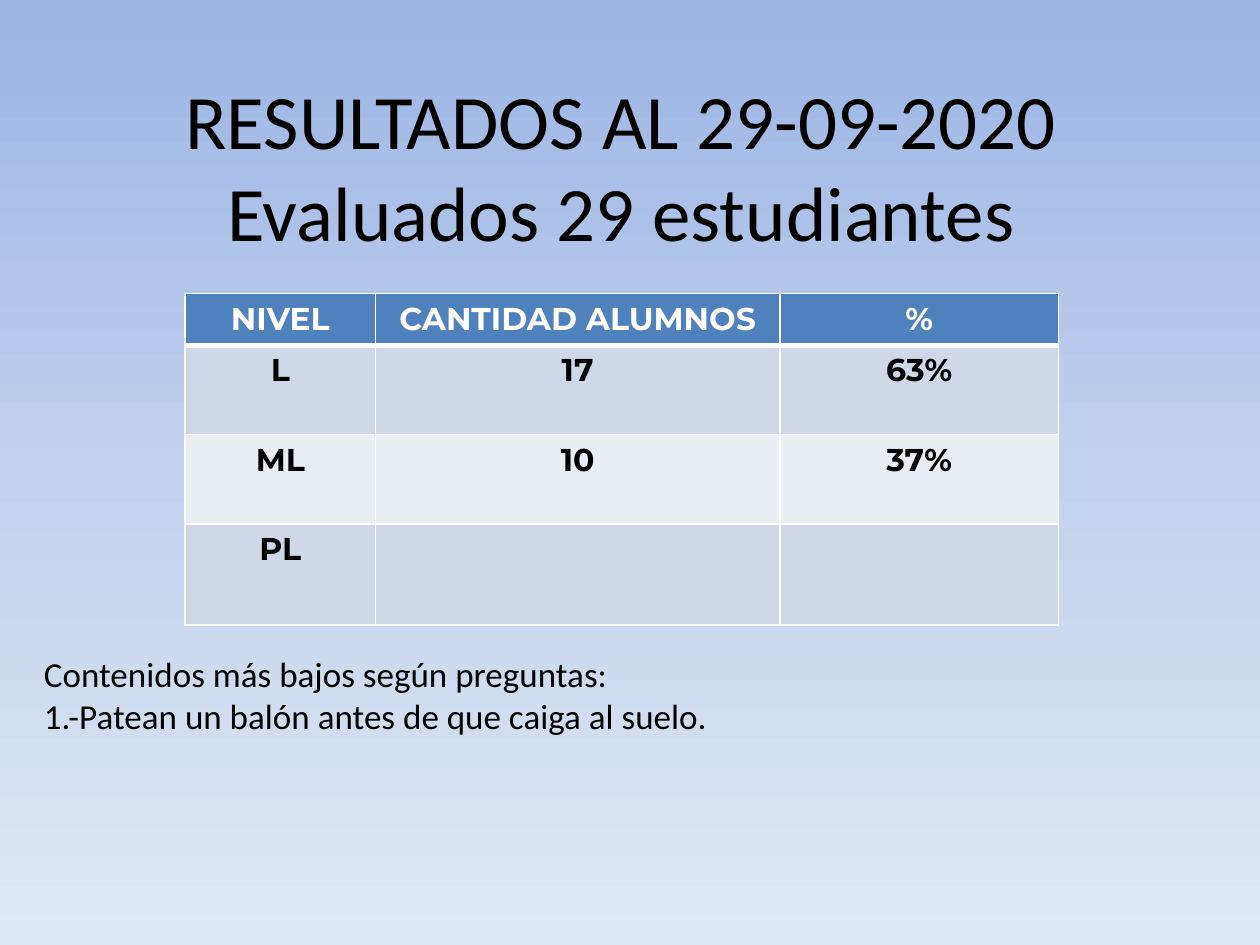
from copy import deepcopy
from dataclasses import dataclass

from lxml.etree import SubElement
from pptx import Presentation
from pptx.dml.color import RGBColor
from pptx.enum.text import MSO_ANCHOR, PP_ALIGN
from pptx.oxml.ns import qn
from pptx.util import Inches, Pt


@dataclass(frozen=True)
class Theme:
    font: str = "Calibri"
    table_font: str = "Montserrat"
    title_size: int = 44
    body_size: int = 20
    table_size: int = 18
    ink: str = "000000"
    white: str = "FFFFFF"
    header: str = "4F81BD"
    bands: tuple = ("D0D8E8", "E9EDF4")
    sky: tuple = ("9AB5E4", "C2D1ED", "E1E8F5")
    thin: int = 1
    thick: int = 3


class SlideBuilder:
    """Holds the theme and the current slide and adds elements to it."""

    def __init__(self, prs, theme):
        self.theme = theme
        self.s = prs.slides.add_slide(prs.slide_layouts[5])

    def background(self):
        fill = self.s.background.fill
        fill.gradient()
        fill.gradient_angle = 270
        stops = self.s.element.find(".//" + qn("a:gsLst"))
        stops.append(deepcopy(stops[-1]))
        colors = self.theme.sky
        for i, (stop, color) in enumerate(zip(fill.gradient_stops, colors)):
            stop.position = i / (len(colors) - 1)
            stop.color.rgb = RGBColor.from_string(color)

    def format(self, tf, size, color, font, bold=False, align=None):
        for p in tf.paragraphs:
            p.alignment = align
            for r in p.runs:
                r.font.size, r.font.name, r.font.bold = Pt(size), font, bold
                r.font.color.rgb = RGBColor.from_string(color)

    def title(self, text, x, y, w, h):
        sp = self.s.shapes.title
        sp.left, sp.top, sp.width, sp.height = map(Inches, (x, y, w, h))
        tf = sp.text_frame
        tf.text = text
        tf.vertical_anchor = MSO_ANCHOR.MIDDLE
        t = self.theme
        self.format(tf, t.title_size, t.ink, t.font, align=PP_ALIGN.CENTER)

    def text(self, text, x, y, w, h):
        tf = self.s.shapes.add_textbox(*map(Inches, (x, y, w, h))).text_frame
        tf.word_wrap = True
        tf.text = text
        self.format(tf, self.theme.body_size, self.theme.ink, self.theme.font)

    def borders(self, cell, top, bottom):
        tcPr = cell._tc.get_or_add_tcPr()
        widths = {"lnL": self.theme.thin, "lnR": self.theme.thin, "lnT": top, "lnB": bottom}
        for i, (side, width) in enumerate(widths.items()):
            ln = SubElement(tcPr, qn(f"a:{side}"), w=str(Pt(width)))
            SubElement(SubElement(ln, qn("a:solidFill")), qn("a:srgbClr"), val=self.theme.white)
            tcPr.insert(i, ln)

    def table(self, data, x, y, col_widths, row_heights):
        t = self.theme
        size = map(Inches, (x, y, sum(col_widths), sum(row_heights)))
        table = self.s.shapes.add_table(len(data), len(data[0]), *size).table
        for col, width in zip(table.columns, col_widths):
            col.width = Inches(width)
        for i, (row, height, values) in enumerate(zip(table.rows, row_heights, data)):
            row.height = Inches(height)
            fill = t.bands[(i - 1) % 2] if i else t.header
            for cell, value in zip(row.cells, values):
                cell.text = value
                cell.fill.solid()
                cell.fill.fore_color.rgb = RGBColor.from_string(fill)
                self.format(cell.text_frame, t.table_size, t.ink if i else t.white,
                            t.table_font, True, PP_ALIGN.CENTER)
                self.borders(cell, t.thick if i == 1 else t.thin, t.thin if i else t.thick)


def main():
    prs = Presentation()
    prs.slide_width, prs.slide_height = Inches(10), Inches(7.5)
    slide = SlideBuilder(prs, Theme())
    slide.background()
    slide.title("RESULTADOS AL 29-09-2020\vEvaluados 29 estudiantes", 0.43, 0.44, 9, 1.73)
    results = [
        ("NIVEL", "CANTIDAD ALUMNOS", "%"),
        ("L", "17", "63%"),
        ("ML", "10", "37%"),
        ("PL", "", ""),
    ]
    slide.table(results, 1.47, 2.33, (1.51, 3.21, 2.21), (0.41, 0.71, 0.71, 0.8))
    slide.text("Contenidos más bajos según preguntas:\n"
               "1.-Patean un balón antes de que caiga al suelo.", 0.25, 5.13, 9.37, 0.77)
    prs.save("out.pptx")


if __name__ == "__main__":
    main()
